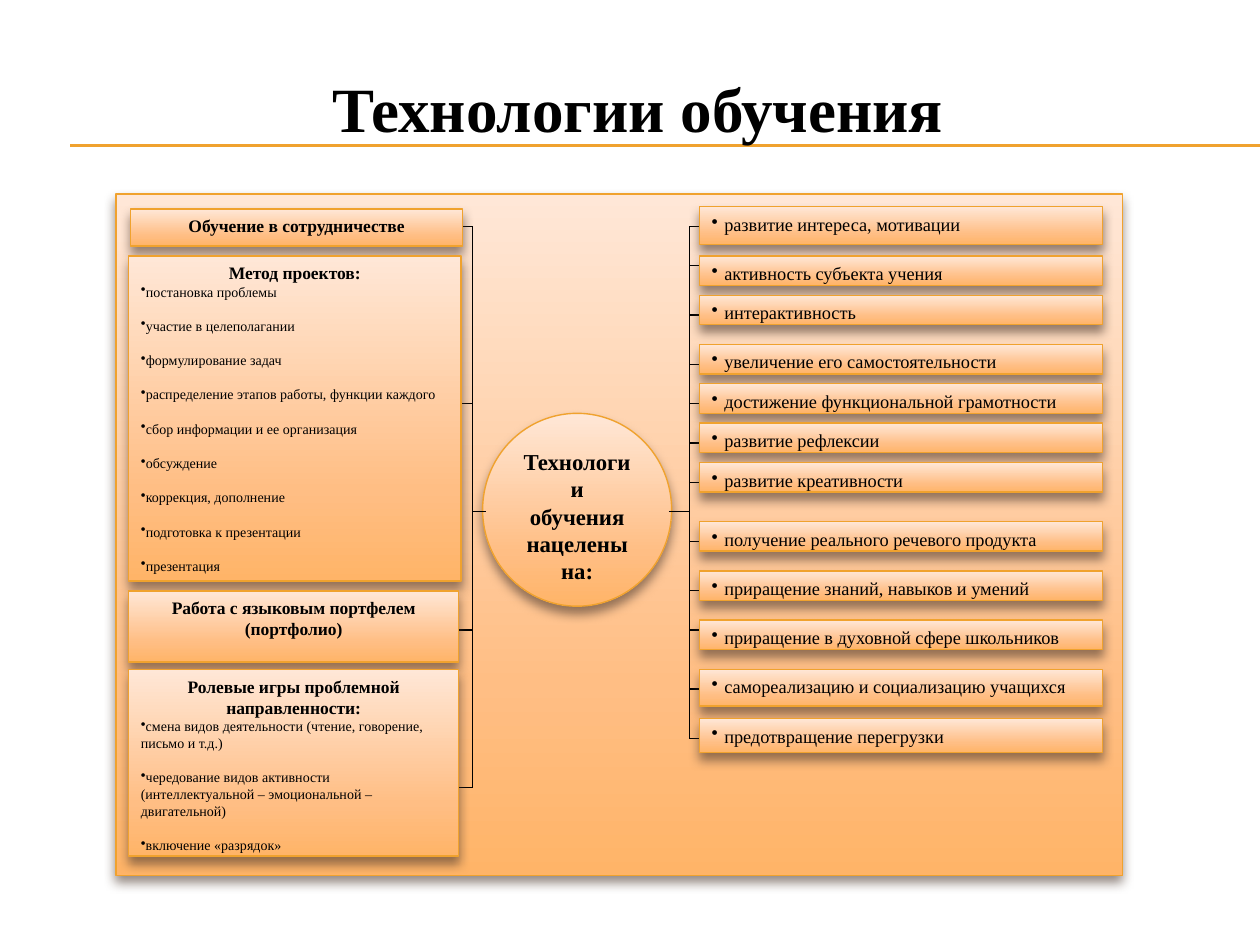
from lxml import etree
from pptx import Presentation
from pptx.dml.color import RGBColor
from pptx.enum import shapes, text
from pptx.oxml import ns
from pptx.util import Pt

BLACK = RGBColor(0x00, 0x00, 0x00)
AMBER = RGBColor(0xF0, 0xA2, 0x2E)
SHADOW = RGBColor(0x4E, 0x3B, 0x30)
FADE = [(0, RGBColor(0xFF, 0xE7, 0xD7)),
        (72, RGBColor(0xFF, 0xBE, 0x84)),
        (100, RGBColor(0xFF, 0xB4, 0x68))]
FONT = "Times New Roman"
STEP = 5.625

METHODS = [
    (1, 8.6, 190, 21, "Обучение в сотрудничестве", []),
    (0, 35.3, 190, 185.8, "Метод проектов:", [
        "постановка проблемы",
        "участие в целеполагании",
        "формулирование задач",
        "распределение этапов работы, функции каждого",
        "сбор информации и ее организация",
        "обсуждение",
        "коррекция, дополнение",
        "подготовка к презентации",
        "презентация"]),
    (0, 226.8, 188.8, 40.5, "Работа с языковым портфелем (портфолио)", []),
    (0, 271.6, 188.8, 106.6, "Ролевые игры проблемной направленности:", [
        "смена видов деятельности (чтение, говорение, письмо и т.д.)",
        "чередование видов активности (интеллектуальной – эмоциональной – двигательной)",
        "включение «разрядок»"]),
]

GOALS = [
    ("развитие интереса, мотивации", 0, 0, 21.6),
    ("активность субъекта учения", 5, 4, 16.9),
    ("интерактивность", 9, 9, 16.9),
    ("увеличение его самостоятельности", 14, 14, 16.9),
    ("достижение функциональной грамотности", 18, 18, 16.9),
    ("развитие рефлексии", 22, 22, 16.9),
    ("развитие креативности", 26, 26, 16.9),
    ("получение реального речевого продукта", 32, 32, 16.9),
    ("приращение знаний, навыков и умений", 37, 37, 16.9),
    ("приращение в духовной сфере школьников", 42, 41, 16.9),
    ("самореализацию и социализацию учащихся", 47, 47, 20.9),
    ("предотвращение перегрузки", 52, 52, 19.4),
]


def add_element(parent, tag, **attributes):
    return etree.SubElement(parent, ns.qn(tag), attributes)


def add_line(page, x1, y1, x2, y2, color=BLACK):
    line = page.shapes.add_connector(
        shapes.MSO_CONNECTOR.STRAIGHT, Pt(x1), Pt(y1), Pt(x2), Pt(y2))
    line.line.color.rgb = color
    line.line.width = Pt(0.75)
    add_element(line._element.spPr, "a:effectLst")


def add_block(page, kind, left, top, width, height):
    block = page.shapes.add_shape(kind, Pt(left), Pt(top), Pt(width), Pt(height))
    block.line.color.rgb = AMBER
    block.line.width = Pt(0.79)
    properties = block._element.spPr
    gradient = etree.Element(ns.qn("a:gradFill"), rotWithShape="1")
    stops = add_element(gradient, "a:gsLst")
    for position, color in FADE:
        stop = add_element(stops, "a:gs", pos=str(position * 1000))
        add_element(stop, "a:srgbClr", val=str(color))
    add_element(gradient, "a:lin", ang="5400000", scaled="0")
    properties.find(ns.qn("a:ln")).addprevious(gradient)
    effects = add_element(properties, "a:effectLst")
    shadow = add_element(effects, "a:outerShdw", blurRad=str(Pt(6)),
                         dist=str(Pt(4)), dir="5400000", rotWithShape="0")
    color = add_element(shadow, "a:srgbClr", val=str(SHADOW))
    add_element(color, "a:alpha", val="60000")
    block.text_frame.word_wrap = True
    block.text_frame.vertical_anchor = text.MSO_ANCHOR.TOP
    return block


def write(para, words, size, bold=False, after=0, align=text.PP_ALIGN.CENTER):
    para.text = words
    para.alignment = align
    para.space_after = Pt(after)
    para.font.name = FONT
    para.font.size = Pt(size)
    para.font.bold = bold
    para.font.color.rgb = BLACK


def write_bullet(para, words, size, indent=0):
    write(para, words, size, after=10, align=text.PP_ALIGN.LEFT)
    properties = para._p.get_or_add_pPr()
    properties.set("marL", str(Pt(indent)))
    properties.set("indent", str(-Pt(indent)))
    bullet = etree.Element(ns.qn("a:buChar"), char="•")
    properties.find(ns.qn("a:defRPr")).addprevious(bullet)


def add_title(page, left, top, width, height):
    for offset in (54.7, 55.4):
        add_line(page, left + 18, top + offset, 720, top + offset, AMBER)
    box = page.shapes.add_textbox(Pt(left), Pt(top), Pt(width), Pt(height))
    box.text_frame.word_wrap = True
    box.text_frame.vertical_anchor = text.MSO_ANCHOR.MIDDLE
    write(box.text_frame.paragraphs[0], "Технологии обучения", 36, bold=True)


def add_methods(page, left, top):
    spine = left + 196.6
    ticks = [(190.8, 18.7), (190.8, 119.5), (185, 249.1), (185, 339.1)]
    for start, offset in ticks:
        add_line(page, left + start, top + offset, spine, top + offset)
    add_line(page, spine, top + ticks[0][1], spine, top + ticks[-1][1])
    for x, y, width, height, heading, items in METHODS:
        block = add_block(page, shapes.MSO_SHAPE.FLOWCHART_PROCESS,
                          left + x, top + y, width, height)
        frame = block.text_frame
        write(frame.paragraphs[0], heading, 10, bold=True, after=0 if items else 10)
        for item in items:
            write_bullet(frame.add_paragraph(), item, 8)


def add_goals(page, left, top):
    spine = left - 5.6
    first_tick = top + 11.3
    add_line(page, spine, first_tick, spine, first_tick + GOALS[-1][2] * STEP)
    for words, row, tick, height in GOALS:
        y = first_tick + tick * STEP
        add_line(page, spine, y, left + 2, y)
        block = add_block(page, shapes.MSO_SHAPE.FLOWCHART_PROCESS,
                          left, top + row * STEP, 230.4, height)
        write_bullet(block.text_frame.paragraphs[0], words, 10.5, indent=7.2)


def add_hub(page, left, top, width, height):
    hub = add_block(page, shapes.MSO_SHAPE.FLOWCHART_CONNECTOR, left, top, width, height)
    write(hub.text_frame.paragraphs[0], "Технологии обучения нацелены на:", 13,
          bold=True, after=10)
    y = top + 56.2
    add_line(page, left - 5.8, y, left + 2.2, y)
    add_line(page, left + width - 1.5, y, left + width + 10, y)


def main():
    deck = Presentation()
    deck.slide_width, deck.slide_height = Pt(720), Pt(540)
    page = deck.slides.add_slide(deck.slide_layouts[6])
    add_block(page, shapes.MSO_SHAPE.FLOWCHART_PROCESS, 66.2, 110.9, 575.3, 389.5)
    add_title(page, 22.3, 28.1, 684, 66.2)
    add_hub(page, 275.8, 236.2, 108, 110.2)
    add_methods(page, 73.4, 110.9)
    add_goals(page, 399.6, 118.1)
    deck.save("out.pptx")


if __name__ == "__main__":
    main()
